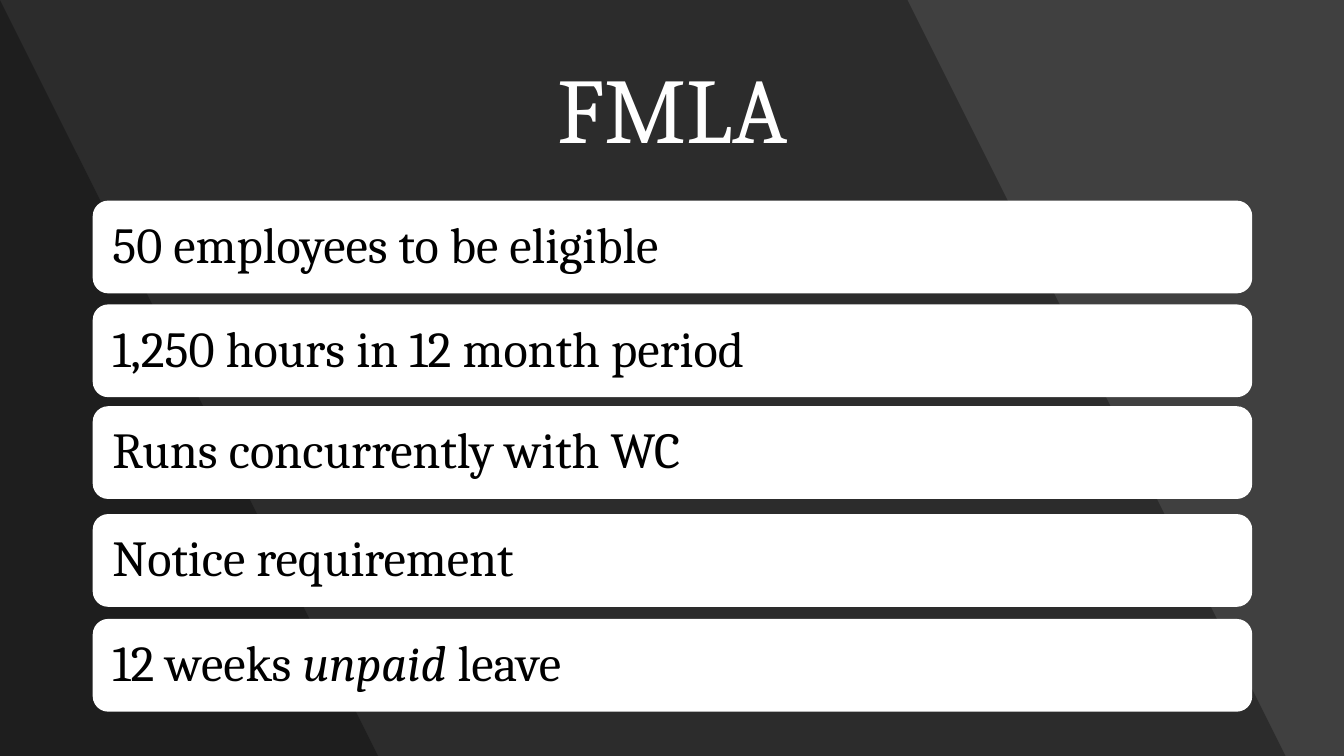
from lxml.etree import SubElement
from pptx import Presentation
from pptx.dml.color import RGBColor as Rgb
from pptx.enum.shapes import MSO_SHAPE as Preset
from pptx.enum.text import MSO_ANCHOR as Anchor, PP_ALIGN as Align
from pptx.oxml.ns import qn
from pptx.util import Inches, Pt

THEME = {
    "ground": Rgb(0x40, 0x40, 0x40),
    "shade": Rgb(0, 0, 0),
    "shade_alpha": "30000",
    "bar": Rgb(255, 255, 255),
    "title": {"name": "Cambria", "size": Pt(66), "color": Rgb(255, 255, 255)},
    "point": {"name": "Cambria", "size": Pt(36), "color": Rgb(0, 0, 0)},
}
WIDTH, HEIGHT = 13.33, 7.5
BAR_LEFT, BAR_WIDTH, BAR_HEIGHT = 0.92, 11.5, 0.92
BAND_EDGES = [(9.42, 12.89), (0.44, 3.92)]
POINTS = [
    (1.99, ["50 employees to be eligible"]),
    (3.02, ["1,250 hours in 12 month period"]),
    (4.03, ["Runs concurrently with WC"]),
    (5.10, ["Notice requirement"]),
    (6.14, ["12 weeks ", "unpaid", " leave"]),
]


def write(frame, pieces, style, align, inset):
    layout = {"word_wrap": True, "vertical_anchor": Anchor.MIDDLE,
              "margin_left": inset, "margin_right": inset}
    for key, value in layout.items():
        setattr(frame, key, value)
    line = frame.paragraphs[0]
    line.alignment = align
    line.line_spacing = 0.9
    for index, piece in enumerate(pieces):
        run = line.add_run()
        run.text = piece
        for key, value in {"name": style["name"], "size": style["size"],
                           "italic": index % 2 == 1}.items():
            setattr(run.font, key, value)
        run.font.color.rgb = style["color"]


def paint(shape, color):
    shape.shadow.inherit = False
    shape.fill.solid()
    shape.fill.fore_color.rgb = color
    shape.line.fill.background()


deck = Presentation()
deck.slide_width, deck.slide_height = Inches(WIDTH), Inches(HEIGHT)
slide = deck.slides.add_slide(deck.slide_layouts[6])
slide.background.fill.solid()
slide.background.fill.fore_color.rgb = THEME["ground"]

for top_edge, bottom_edge in BAND_EDGES:
    outline = slide.shapes.build_freeform(0, 0, scale=Inches(1))
    outline.add_line_segments(
        [(top_edge, 0), (bottom_edge, HEIGHT), (0, HEIGHT)], close=True)
    band = outline.convert_to_shape()
    paint(band, THEME["shade"])
    tint = next(band.fill._xPr.iter(qn("a:srgbClr")))
    SubElement(tint, qn("a:alpha"), val=THEME["shade_alpha"])

title = slide.shapes.add_textbox(
    Inches(BAR_LEFT), Inches(0.4), Inches(BAR_WIDTH), Inches(1.45))
write(title.text_frame, ["FMLA"], THEME["title"], Align.CENTER, Inches(0.1))

for top, pieces in POINTS:
    bar = slide.shapes.add_shape(
        Preset.ROUNDED_RECTANGLE, Inches(BAR_LEFT), Inches(top),
        Inches(BAR_WIDTH), Inches(BAR_HEIGHT))
    paint(bar, THEME["bar"])
    write(bar.text_frame, pieces, THEME["point"], Align.LEFT, Inches(0.15))

deck.save("out.pptx")
